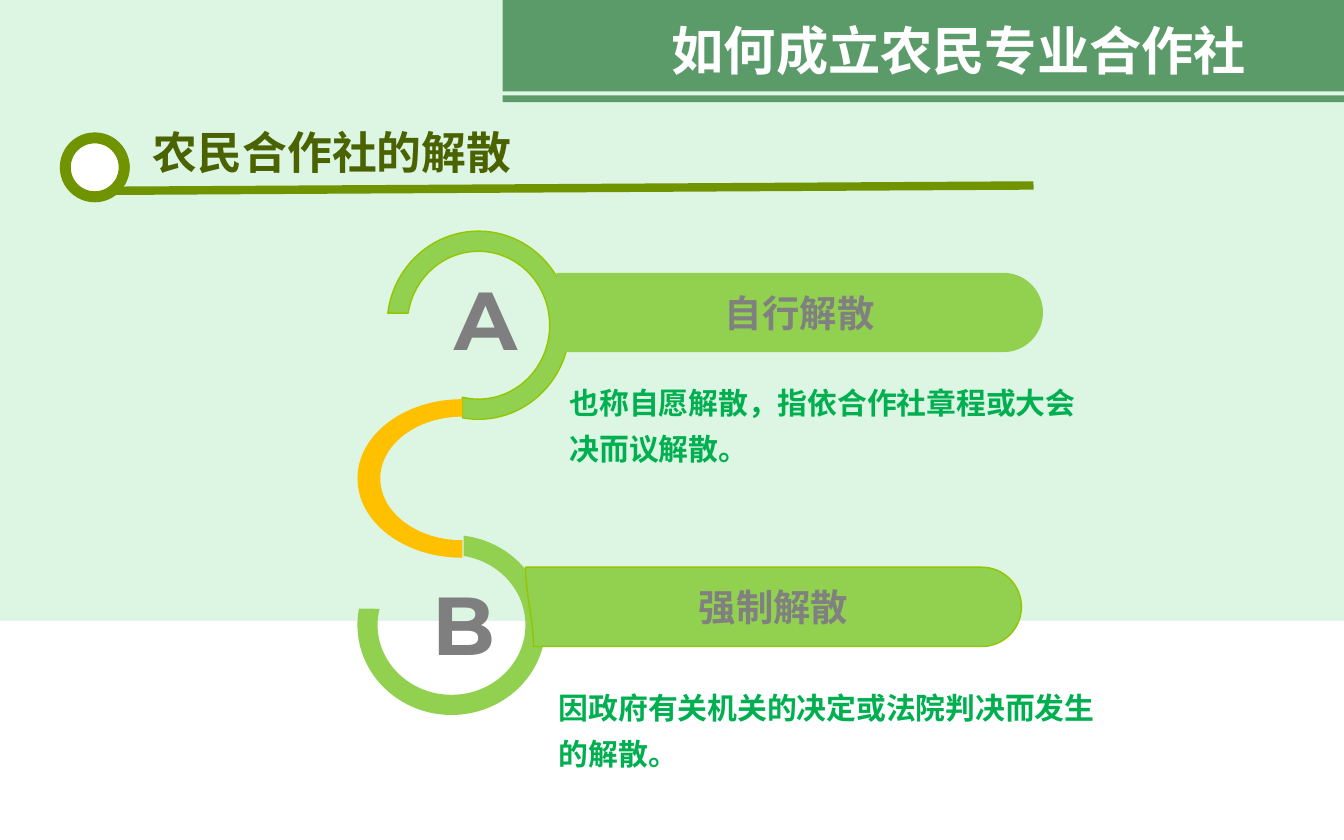
from math import ceil, cos, floor, radians, sin, tan

from lxml import etree
from pptx import Presentation
from pptx.dml.color import RGBColor
from pptx.enum.shapes import MSO_CONNECTOR, MSO_SHAPE
from pptx.enum.text import MSO_ANCHOR, MSO_AUTO_SIZE, PP_ALIGN
from pptx.oxml.ns import qn
from pptx.util import Inches, Pt

RECTANGLE, OVAL, DONUT = MSO_SHAPE.RECTANGLE, MSO_SHAPE.OVAL, MSO_SHAPE.DONUT
CENTER, MIDDLE = PP_ALIGN.CENTER, MSO_ANCHOR.MIDDLE
CJK, LATIN = "Noto Sans CJK SC", "Montserrat"
MINT, BAND, WHITE = "DDF5E3", "217435", "FFFFFF"
LIME, LIME_EDGE, AMBER, OLIVE = "92D050", "94C600", "FFC000", "6F9400"

# left, top, width, height, fill, opacity in percent
BACKDROP = [
    (3.74, 0, 6.26, 0.68, BAND, 69),
    (3.74, 0.71, 6.26, 0.05, BAND, 69),
    (0, 4.62, 10, 1.63, WHITE, 100),
]
# centre, outer radii, inner radii, outer angles, inner angles, fill, edge
# (angles run clockwise from the right-hand side)
ARCS = [
    ((3.56, 2.42), (0.68, 0.7), (0.53, 0.55), (187.4, 460), (189.4, 463), LIME, LIME_EDGE),
    ((3.44, 3.56), (0.78, 0.59), (0.61, 0.46), (90, 270), (90, 270), AMBER, None),
    ((3.36, 4.65), (0.7, 0.67), (0.55, 0.52), (-82.6, 190.5), (-80.6, 193.3), LIME, None),
]
# text, top-left x, bottom-left x, right, top, edge
BARS = [
    ("自行解散", 4.14, 4.14, 7.76, 2.03, None),
    ("强制解散", 3.91, 3.97, 7.6, 4.22, LIME_EDGE),
]
BAR_HEIGHT = 0.59
# text, left, top, width, height, size, font, colour, line spacing, wrap
TEXTS = [
    ("A", 3.28, 1.95, 0.55, 0.84, 44, LATIN, "7F7F7F", 1, True),
    ("B", 3.12, 4.22, 0.55, 0.84, 44, LATIN, "7F7F7F", 1, True),
    ("也称自愿解散，指依合作社章程或大会决而议解散。",
     4.14, 2.73, 4.06, 0.77, 16, CJK, "00B050", 1.3, True),
    ("因政府有关机关的决定或法院判决而发生的解散。",
     4.06, 5, 4.36, 0.77, 16, CJK, "00B050", 1.3, True),
    ("如何成立农民专业合作社", 4.9, 0.09, 4.5, 0.57, 28, CJK, WHITE, 1, False),
    ("农民合作社的解散", 1.04, 0.88, 3.2, 0.5, 24, CJK, "4A6300", 1, True),
]


def color(hex_code):
    return RGBColor.from_string(hex_code)


def paint(shape, fill, edge=None, opacity=100):
    shape.shadow.inherit = False
    shape.fill.solid()
    shape.fill.fore_color.rgb = color(fill)
    if opacity < 100:
        tint = shape.fill._xPr.find(qn("a:solidFill"))[0]
        etree.SubElement(tint, qn("a:alpha"), val=str(opacity * 1000))
    if edge:
        shape.line.color.rgb = color(edge)
        shape.line.width = Pt(0.75)
    else:
        shape.line.fill.background()


def add_preset(slide, kind, left, top, width, height):
    return slide.shapes.add_shape(
        kind, Inches(left), Inches(top), Inches(width), Inches(height))


def arc_steps(center, radii, start, end):
    """Return a first point, then one Bézier curve for each quadrant crossed."""
    def spot(angle, pull=0):
        across = cos(angle) - pull * sin(angle)
        down = sin(angle) + pull * cos(angle)
        return center[0] + radii[0] * across, center[1] + radii[1] * down

    low, high = min(start, end), max(start, end)
    quarters = range(floor(low / 90) + 1, ceil(high / 90))
    angles = [radians(a) for a in (low, *(90 * q for q in quarters), high)]
    if start > end:
        angles.reverse()
    steps = [(spot(angles[0]),)]
    for a, b in zip(angles, angles[1:]):
        pull = 4 / 3 * tan((b - a) / 4)
        steps.append((spot(a, pull), spot(b, -pull), spot(b)))
    return steps


def add_outline(slide, steps):
    """Draw steps of one point as straight lines and of three as Bézier curves."""
    corners = [(Inches(x), Inches(y)) for step in steps for x, y in step]
    builder = slide.shapes.build_freeform(*corners[0])
    builder.add_line_segments(corners[1:], close=True)
    shape = builder.convert_to_shape()
    lines = iter(list(shape._element.iter(qn("a:lnTo"))))
    for step in steps[1:]:
        parts = [next(lines) for _ in step]
        if len(parts) == 3:
            curve = etree.Element(qn("a:cubicBezTo"))
            parts[0].addprevious(curve)
            for part in parts:
                curve.append(part[0])
                part.getparent().remove(part)
    return shape


def write(para, text, size, font, hex_code):
    """Add one bold run, using the font for Latin and East Asian text."""
    span = para.add_run()
    span.text = text
    span.font.size = Pt(size)
    span.font.bold = True
    span.font.color.rgb = color(hex_code)
    span.font.name = font
    etree.SubElement(span.font._element, qn("a:ea"), typeface=font)


def add_bar(slide, text, top_left, bottom_left, right, top, edge):
    radius = BAR_HEIGHT / 2
    bottom = top + BAR_HEIGHT
    cap = arc_steps((right - radius, top + radius), (radius, radius), -90, 90)
    left_side = ((bottom_left, bottom - BAR_HEIGHT / 3),
                 (top_left, top + BAR_HEIGHT / 3), (top_left, top))
    bar = add_outline(
        slide, [((top_left, top),), *cap, ((bottom_left, bottom),), left_side])
    paint(bar, LIME, edge)
    bar.text_frame.vertical_anchor = MIDDLE
    para = bar.text_frame.paragraphs[0]
    para.alignment = CENTER
    write(para, text, 20, CJK, "808080")


def add_text(slide, text, left, top, width, height, size, font, hex_code, spacing, wrap):
    box = slide.shapes.add_textbox(
        Inches(left), Inches(top), Inches(width), Inches(height))
    box.text_frame.word_wrap = wrap
    box.text_frame.auto_size = MSO_AUTO_SIZE.SHAPE_TO_FIT_TEXT
    para = box.text_frame.paragraphs[0]
    para.line_spacing = spacing
    write(para, text, size, font, hex_code)


def add_heading_marker(slide):
    paint(add_preset(slide, OVAL, 0.5, 1.03, 0.46, 0.43), WHITE, OLIVE)
    ring = add_preset(slide, DONUT, 0.45, 0.99, 0.51, 0.51)
    ring.adjustments[0] = 0.14
    paint(ring, OLIVE, OLIVE)
    rule = slide.shapes.add_connector(
        MSO_CONNECTOR.STRAIGHT, Inches(0.81), Inches(1.42), Inches(7.69), Inches(1.38))
    rule.line.color.rgb = color(OLIVE)
    rule.line.width = Pt(4.5)
    etree.SubElement(rule._element.spPr, qn("a:effectLst"))


def main():
    deck = Presentation()
    deck.slide_width, deck.slide_height = Inches(10), Inches(6.25)
    page = deck.slides.add_slide(deck.slide_layouts[6])
    page.background.fill.solid()
    page.background.fill.fore_color.rgb = color(MINT)

    for *place, fill, opacity in BACKDROP:
        paint(add_preset(page, RECTANGLE, *place), fill, opacity=opacity)
    for center, outer, inner, outer_angles, inner_angles, fill, edge in ARCS:
        rim = arc_steps(center, outer, *outer_angles)
        hole = arc_steps(center, inner, *reversed(inner_angles))
        paint(add_outline(page, rim + hole), fill, edge)
    for bar in BARS:
        add_bar(page, *bar)
    for text in TEXTS:
        add_text(page, *text)
    add_heading_marker(page)
    deck.save("out.pptx")


if __name__ == "__main__":
    main()
